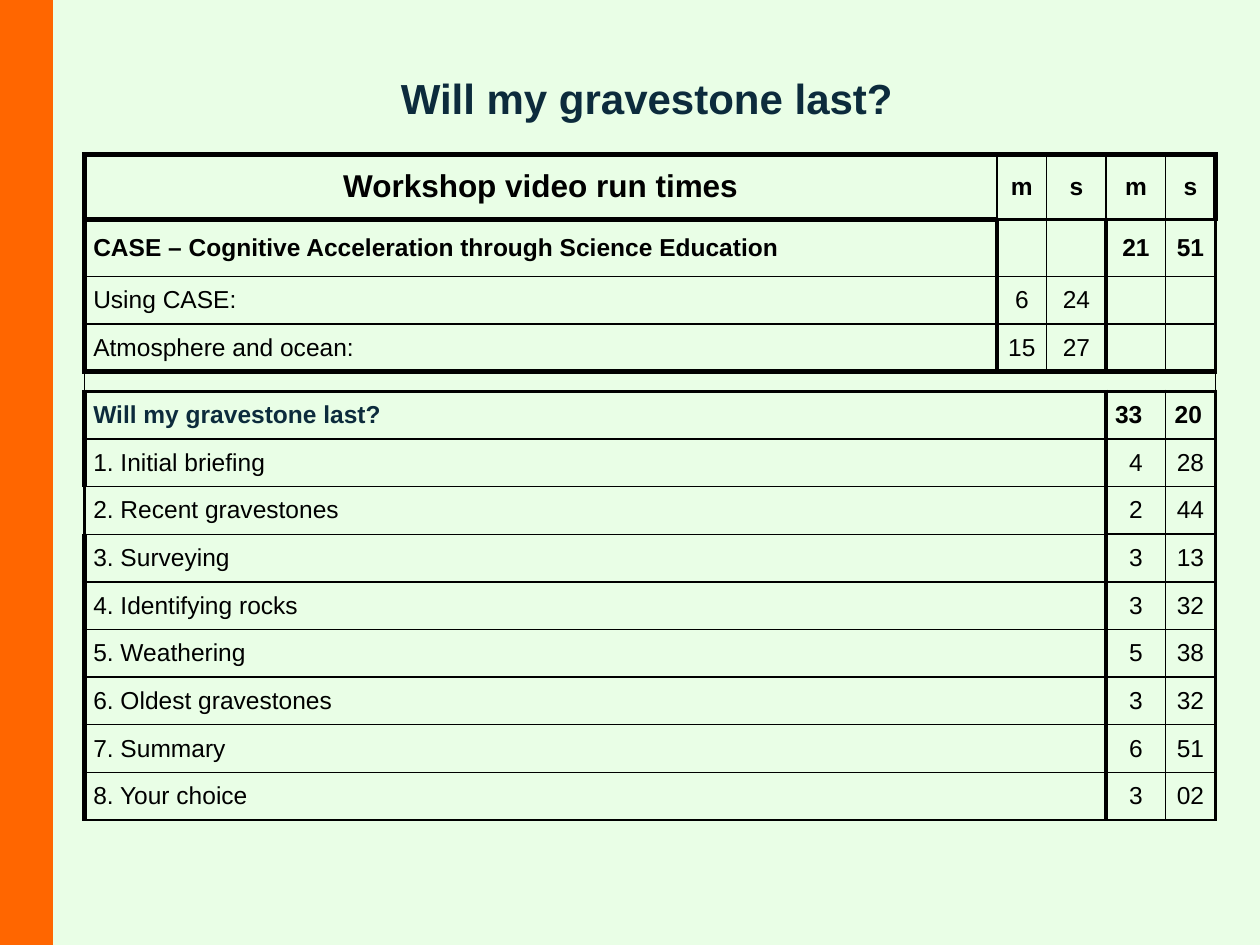
from dataclasses import dataclass

from lxml import etree
from pptx import Presentation
from pptx.dml.color import RGBColor as RGB
from pptx.enum.shapes import MSO_SHAPE as SHAPE
from pptx.enum.text import MSO_ANCHOR as ANCHOR, PP_ALIGN as ALIGN
from pptx.oxml.ns import qn
from pptx.util import Cm, Pt


@dataclass(frozen=True)
class Theme:
    font: str = "Arial"
    ink: str = "000000"
    navy: str = "0C2B3C"
    mint: str = "E9FEE6"
    orange: str = "FF6600"
    title: float = 24
    heading: float = 18
    body: float = 14
    spacer: float = 6


# Each row lists its cells as (text, columns spanned)
HEADER, COURSE, SPACER, SECTION, LAST_COL = 0, 1, 4, 5, 4
TOPICS = [
    ("1. Initial briefing", "4", "28"),
    ("2. Recent gravestones", "2", "44"),
    ("3. Surveying", "3", "13"),
    ("4. Identifying rocks", "3", "32"),
    ("5. Weathering", "5", "38"),
    ("6. Oldest gravestones", "3", "32"),
    ("7. Summary", "6", "51"),
    ("8. Your choice", "3", "02"),
]
ROWS = [
    [(t, 1) for t in ("Workshop video run times", "m", "s", "m", "s")],
    [(t, 1) for t in ("CASE – Cognitive Acceleration through Science Education",
                      "", "", "21", "51")],
    [(t, 1) for t in ("Using CASE:", "6", "24", "", "")],
    [(t, 1) for t in ("Atmosphere and ocean:", "15", "27", "", "")],
    [("", 5)],
] + [[(label, 3), (m, 1), (s, 1)]
     for label, m, s in [("Will my gravestone last?", "33", "20")] + TOPICS]
COL_WIDTHS = [18.4, 1, 1.2, 1.2, 1]
ROW_HEIGHTS = [1.3, 1.15, 0.96, 0.96, 0.4] + [0.96] * 9


def horizontal_rule(edge, col):
    """Width in points of the line above row number edge."""
    if edge == 0 or (col == 0 and edge in (1, SPACER)):
        return 3
    if edge in (1, SPACER, SECTION):
        return 2.25
    return 0.75 if col == 0 and edge in (7, 8) else 1


def vertical_rule(row, edge):
    """Width in points of the line left of column number edge."""
    if row == SPACER:
        return 1
    if edge == 0:
        return 2.25 if row == 7 else 3
    if row == HEADER:
        return 3 if edge == LAST_COL + 1 else 1
    return 2.25 if edge in (1, 3, LAST_COL + 1) else 1


class SlideBuilder:
    def __init__(self, slide, theme):
        self.s, self.theme = slide, theme

    def panel(self, left, width, color):
        sp = self.s.shapes.add_shape(SHAPE.RECTANGLE, Cm(left), 0, Cm(width), Cm(19.05))
        sp.shadow.inherit = False
        sp.fill.solid()
        sp.fill.fore_color.rgb = RGB.from_string(color)
        sp.line.fill.background()

    def style(self, p, size, color, bold):
        for r in p.runs:
            r.font.name, r.font.size, r.font.bold = self.theme.font, Pt(size), bold
            r.font.color.rgb = RGB.from_string(color)

    def title(self, text, left, top, width, height, indent):
        tf = self.s.shapes.add_textbox(Cm(left), Cm(top), Cm(width), Cm(height)).text_frame
        tf.word_wrap = True
        tf.vertical_anchor = ANCHOR.MIDDLE
        p = tf.paragraphs[0]
        p.text = text
        p._p.get_or_add_pPr().set("marL", str(Cm(indent)))
        self.style(p, self.theme.title, self.theme.navy, True)

    def border(self, cell, side, width):
        ln = etree.SubElement(cell._tc.get_or_add_tcPr(), qn(f"a:ln{side}"), w=str(Pt(width)))
        fill = etree.SubElement(ln, qn("a:solidFill"))
        etree.SubElement(fill, qn("a:srgbClr"), val=self.theme.ink)

    def cell_text(self, cell, text, row, col):
        t = self.theme
        cell.margin_left = cell.margin_right = Cm(0.18)
        cell.margin_top = cell.margin_bottom = 0
        cell.vertical_anchor = ANCHOR.MIDDLE
        p = cell.text_frame.paragraphs[0]
        if not text:
            size = t.spacer if row == SPACER else t.body
            etree.SubElement(p._p, qn("a:endParaRPr"), sz=str(size * 100))
            return
        p.text = text
        centred = row == HEADER or (col > 0 and row != SECTION)
        p.alignment = ALIGN.CENTER if centred else ALIGN.LEFT
        self.style(p, t.heading if (row, col) == (HEADER, 0) else t.body,
                   t.navy if (row, col) == (SECTION, 0) else t.ink,
                   row in (HEADER, COURSE, SECTION))

    def table(self, left, top):
        tbl = self.s.shapes.add_table(
            len(ROW_HEIGHTS), len(COL_WIDTHS), Cm(left), Cm(top),
            Cm(sum(COL_WIDTHS)), Cm(sum(ROW_HEIGHTS))).table
        tbl.first_row = tbl.horz_banding = False
        for column, width in zip(tbl.columns, COL_WIDTHS):
            column.width = Cm(width)
        for table_row, height in zip(tbl.rows, ROW_HEIGHTS):
            table_row.height = Cm(height)
        for row, cells in enumerate(ROWS):
            col = 0
            for text, span in cells:
                cell = tbl.cell(row, col)
                if span > 1:
                    cell.merge(tbl.cell(row, col + span - 1))
                self.cell_text(cell, text, row, col)
                self.border(cell, "L", vertical_rule(row, col))
                self.border(cell, "R", vertical_rule(row, col + span))
                self.border(cell, "T", horizontal_rule(row, col))
                self.border(cell, "B", horizontal_rule(row + 1, col))
                cell.fill.background()
                col += span


def main():
    prs = Presentation()
    prs.slide_width, prs.slide_height = Cm(25.4), Cm(19.05)
    theme = Theme()
    b = SlideBuilder(prs.slides.add_slide(prs.slide_layouts[6]), theme)

    # Background and side bar
    b.panel(1.07, 24.33, theme.mint)
    b.panel(0, 1.07, theme.orange)

    # Title and run times
    b.title("Will my gravestone last?", 3.6, 0.33, 18.42, 3.3, indent=4.23)
    b.table(1.7, 3.12)

    prs.save("out.pptx")


if __name__ == "__main__":
    main()
